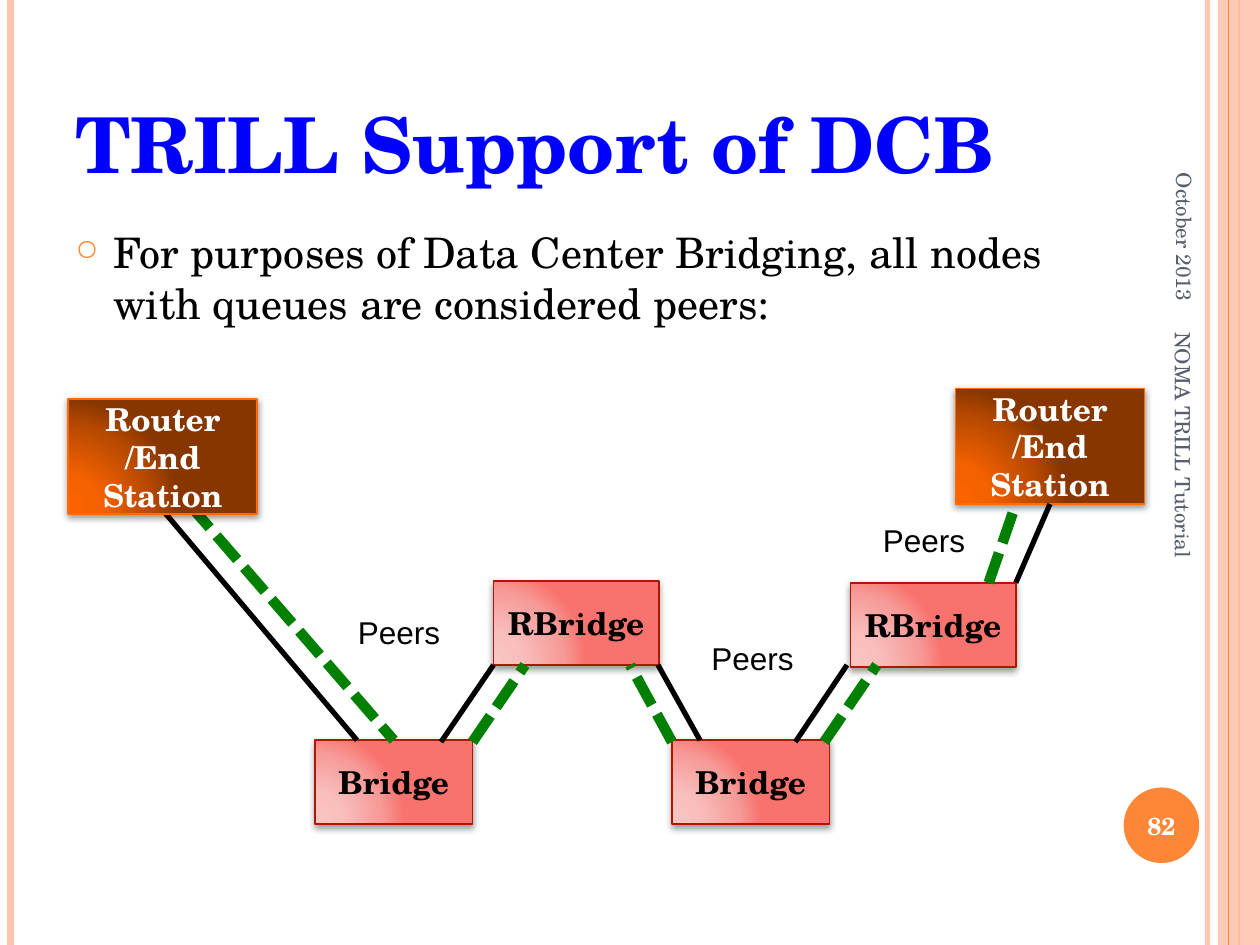
from lxml import etree
from pptx import Presentation
from pptx.dml.color import RGBColor
from pptx.enum import dml, shapes, text
from pptx.oxml import ns
from pptx.util import Pt

SERIF = "TeX Gyre Schola"
ORANGE, PEACH, GREY = "FE8637", "FEC3AE", "575F6D"
ROUTER = {
    "stops": [(0, "FD6400"), (30, "F46100"), (75, "B74900"), (100, "873600")],
    "line": "FF6B0A", "font": "FFFFFF", "shadow": (1.6, 42),
}
BRIDGE = {
    "stops": [(0, "F8C5C3"), (30, "F8BFBD"), (75, "F69B98"), (100, "F8736E")],
    "line": "AC1800", "font": "000000", "shadow": (2, 40),
}


def color(hex_string):
    return RGBColor.from_string(hex_string)


def add_xml(parent, tag, **attributes):
    values = {name: str(value) for name, value in attributes.items()}
    return etree.SubElement(parent, ns.qn(tag), values)


def set_alpha(fill_format_parent, percent):
    for element in fill_format_parent.iter(ns.qn("a:srgbClr")):
        add_xml(element, "a:alpha", val=percent * 1000)


def write(shape, words, size, hex_string, font=SERIF, bold=False,
          align=text.PP_ALIGN.LEFT, anchor=text.MSO_ANCHOR.MIDDLE):
    frame = shape.text_frame
    frame.word_wrap = True
    frame.vertical_anchor = anchor
    frame.text = words
    paragraph = frame.paragraphs[0]
    paragraph.alignment = align
    run_font = paragraph.runs[0].font
    run_font.name, run_font.size, run_font.bold = font, Pt(size), bold
    run_font.color.rgb = color(hex_string)
    return paragraph


def add_text(slide, box, words, size, hex_string, rotation=0, **style):
    shape = slide.shapes.add_textbox(*map(Pt, box))
    shape.rotation = rotation
    return write(shape, words, size, hex_string, **style)


def add_line(slide, start, end, hex_string, width, dash=None):
    connector = slide.shapes.add_connector(
        shapes.MSO_CONNECTOR.STRAIGHT, *map(Pt, (*start, *end)))
    connector.line.color.rgb = color(hex_string)
    connector.line.width = Pt(width)
    if dash:
        connector.line.dash_style = dash
    add_xml(connector._element.spPr, "a:effectLst")
    return connector


def add_plain_shape(slide, kind, box, hex_string):
    shape = slide.shapes.add_shape(kind, *map(Pt, box))
    shape.shadow.inherit = False
    shape.fill.solid()
    shape.fill.fore_color.rgb = color(hex_string)
    shape.line.fill.background()
    return shape


def add_node(slide, box, words, look):
    """Add a box with a radial gradient and a soft shadow below."""
    shape = slide.shapes.add_shape(shapes.MSO_SHAPE.RECTANGLE, *map(Pt, box))
    properties = shape._element.spPr
    gradient = add_xml(properties, "a:gradFill", rotWithShape=1)
    stops = add_xml(gradient, "a:gsLst")
    for position, hex_string in look["stops"]:
        stop = add_xml(stops, "a:gs", pos=position * 1000)
        add_xml(stop, "a:srgbClr", val=hex_string)
    radial = add_xml(gradient, "a:path", path="circle")
    add_xml(radial, "a:fillToRect", l=5000, t=100000, r=120000, b=10000)

    shape.line.color.rgb = color(look["line"])
    shape.line.width = Pt(1)

    distance, opacity = look["shadow"]
    effects = add_xml(properties, "a:effectLst")
    shadow = add_xml(effects, "a:outerShdw", blurRad=Pt(4), dist=Pt(distance),
                     dir=90 * 60000, rotWithShape=0)
    shadow_color = add_xml(shadow, "a:srgbClr", val="000000")
    add_xml(shadow_color, "a:alpha", val=opacity * 1000)
    write(shape, words, 18, look["font"], bold=True, align=text.PP_ALIGN.CENTER)


def add_side_bands(slide, width, height):
    def rule(x, hex_string, weight):
        return add_line(slide, (x, 0), (x, height), hex_string, weight)

    set_alpha(rule(width - 30, PEACH, 3)._element, 93)
    rule(6, PEACH, 4.5)
    rule(width - 12, ORANGE, 1.5)
    band = add_plain_shape(slide, shapes.MSO_SHAPE.RECTANGLE,
                           (width - 24, 0, 24, height), PEACH)
    set_alpha(band._element.spPr, 87)
    rule(width - 18, ORANGE, 0.75)


def add_heading(slide, left, top, width):
    add_text(slide, (left, top, width, 90), "TRILL Support of DCB", 44, "0000FF",
             bold=True, anchor=text.MSO_ANCHOR.BOTTOM)
    paragraph = add_text(
        slide, (left, top + 104.4, width, 84),
        "For purposes of Data Center Bridging, all nodes with queues are considered peers:",
        24, "000000", anchor=text.MSO_ANCHOR.TOP)
    paragraph.space_before = Pt(6)
    properties = paragraph._p.get_or_add_pPr()
    properties.set("marL", str(Pt(21.6)))
    properties.set("indent", str(-Pt(21.6)))
    add_xml(add_xml(properties, "a:buClr"), "a:srgbClr", val=ORANGE)
    add_xml(properties, "a:buSzPct", val=70000)
    add_xml(properties, "a:buChar", char="○")


def add_footer(slide, left, top):
    """Add the rotated date and title, and the page number in its circle."""
    add_text(slide, (left, top, 158.4, 30), "October 2013", 12, GREY,
             rotation=90, align=text.PP_ALIGN.RIGHT)
    add_text(slide, (left - 47.5, top + 209.5, 252, 28.8), "NOMA TRILL Tutorial",
             12, GREY, rotation=90)
    add_plain_shape(slide, shapes.MSO_SHAPE.OVAL,
                    (left + 44.5, top + 365, 43.2, 43.2), ORANGE)
    add_text(slide, (left + 42.1, top + 366.1, 48, 41), "82", 14, "FFFFFF",
             bold=True, align=text.PP_ALIGN.CENTER)


def add_network(slide, left, top):
    def place(x, y):
        return left + x, top + y

    def router(x, y):
        add_node(slide, (*place(x, y), 108, 66), "Router /End Station", ROUTER)

    router(507, 0)
    for x, y in [(243, 110), (447, 111)]:
        add_node(slide, (*place(x, y), 94.5, 48), "RBridge", BRIDGE)
    for x in (141, 345):
        add_node(slide, (*place(x, 201), 90, 48), "Bridge", BRIDGE)

    links = [
        ((51, 66), (165, 201)), ((213, 202), (243, 158)),
        ((337, 158), (361, 201)), ((415.5, 202), (445, 158)),
        ((541.5, 111), (561, 66)),
    ]
    peerings = [
        ((69, 66), (186, 201)), ((231, 202), (261, 158)),
        ((345, 202), (321, 158)), ((432, 202), (462, 158)),
        ((526, 111), (541.5, 66)),
    ]
    for start, end in links:
        add_line(slide, place(*start), place(*end), "000000", 3)
    for start, end in peerings:
        add_line(slide, place(*start), place(*end), "008000", 6,
                 dml.MSO_LINE.SQUARE_DOT)
    for x, y in [(135, 125), (337, 139.5), (435, 72)]:
        add_text(slide, (*place(x, y), 108, 29), "Peers", 18, "000000",
                 font="Arial", align=text.PP_ALIGN.CENTER,
                 anchor=text.MSO_ANCHOR.TOP)
    router(0, 6)


def main():
    presentation = Presentation()
    presentation.slide_width, presentation.slide_height = Pt(720), Pt(540)
    slide = presentation.slides.add_slide(presentation.slide_layouts[6])
    add_side_bands(slide, 720, 540)
    add_heading(slide, 36, 21.6, 588)
    add_footer(slide, 597.6, 85)
    add_network(slide, 39, 222)
    presentation.save("out.pptx")


if __name__ == "__main__":
    main()
